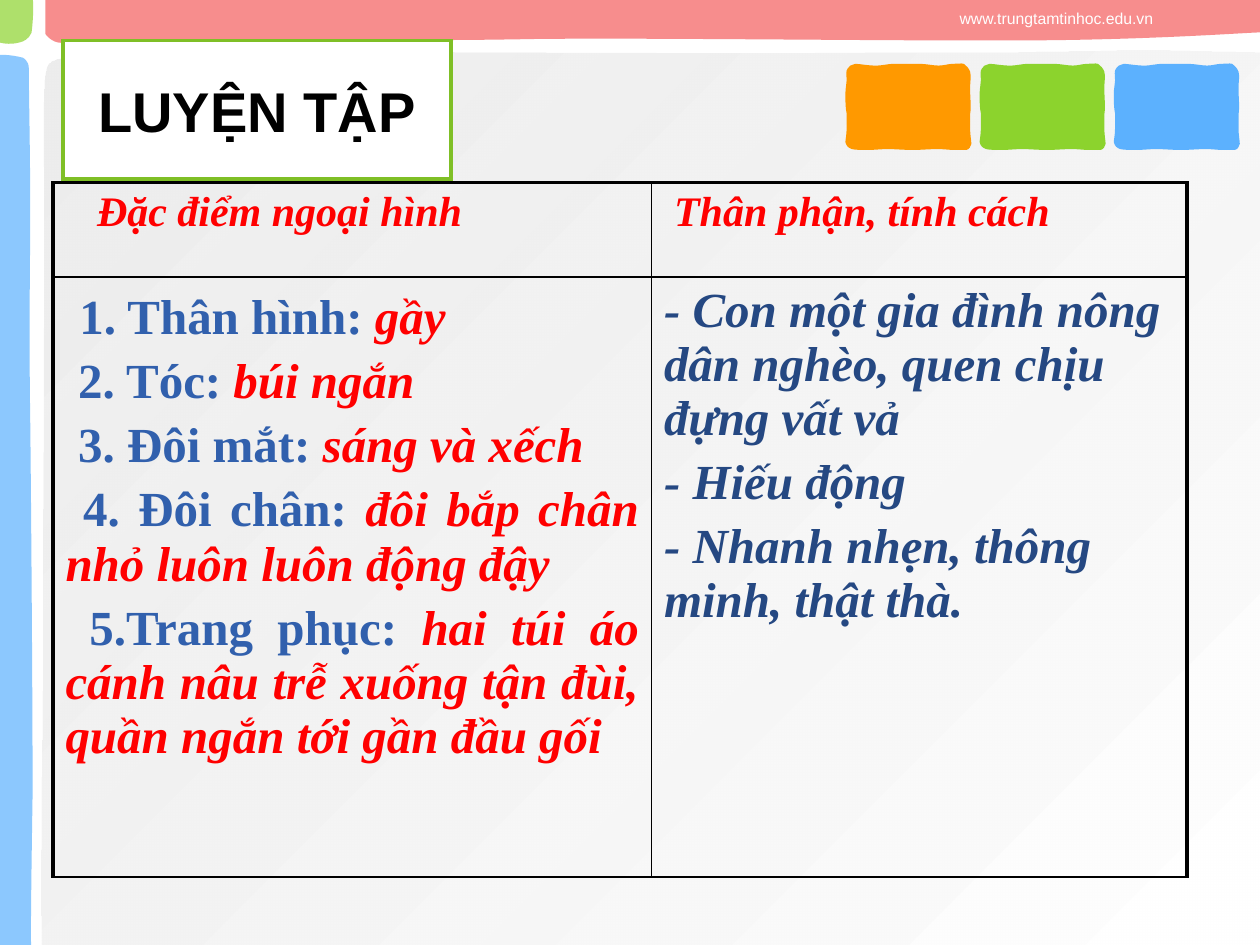
from lxml import etree
from pptx import Presentation
from pptx import util as u
from pptx.dml import color
from pptx.enum import shapes, text
from pptx.oxml import ns

COLS, ROWS = 10, 7.5
RED, NAVY, BLUE, LIME = "FF0000", "254882", "3160AD", "8CD32D"
SKY = "5CB1FE"
SERIF = dict(name="Times New Roman", bold=True, italic=True)

PANEL = [(100, 100), (100, .56), (88.2, 0, 85, .56, 75.2, .56),
         (65.5, .56, 53.5, .7, 41.4, .56), (29.3, .4, 9.4, .4, 2.6, 1),
         (.4, 1.4, .4, 1.5, .3, 4.9), (.2, 8.1, .3, 10, .3, 20),
         (.3, 30.6, .2, 52.5, .2, 65.7), (.2, 79, 0, 87.6, .1, 100)]
BAND = [(0, 0), (100, 0), (100, 76), (100, 74, 92.5, 91, 82.6, 94),
        (72.6, 97, 51.3, 88, 40.5, 91), (29.6, 97, 23.8, 91, 17.3, 91),
        (10.8, 94, 4.3, 100, 1.3, 100), (.5, 100, 0, 79, 0, 79)]
SIDE = [(0, 100), (92, 100), (90, 100, 92, 93, 96, 83),
        (96, 73, 92, 51, 89, 41), (85, 30, 89, 24, 89, 17.5),
        (89, 11, 85, 4.5, 85, 1.6), (85, .7, 67, .4, 67, .4),
        (26, 0, 0, .1, 0, .1)]
CORNER = [(0, 0), (97, 0), (100, 33, 93, 72, 93, 72),
          (85, 86, 70, 92, 56, 94), (26, 100, 0, 94, 0, 94)]
TILE = [(2, 6), (3, 3, 4, 3, 8, 1), (11, 1, 18, 3, 24, 3),
        (30, 3, 33, 1, 39, 1), (46, 1, 54, 1, 59, 1), (64, 1, 70, 3, 74, 3),
        (78, 3, 82, 1, 85, 1), (88, 1, 92, 0, 94, 1), (96, 3, 98, 6, 99, 10),
        (100, 16, 99, 20, 99, 30), (99, 39, 100, 51, 99, 59),
        (99, 67, 99, 70, 99, 75), (99, 83, 100, 90, 100, 93),
        (99, 96, 99, 99, 96, 100), (94, 100, 89, 100, 86, 100),
        (83, 100, 78, 99, 73, 99), (67, 99, 60, 100, 53, 100),
        (47, 100, 39, 99, 34, 99), (28, 99, 23, 100, 18, 100),
        (13, 100, 8, 100, 5, 99), (2, 97, 1, 96, 0, 91),
        (0, 88, 1, 83, 1, 75), (1, 68, 1, 65, 1, 58),
        (0, 52, 0, 43, 0, 36), (0, 28, 1, 25, 1, 20), (1, 14, 0, 9, 2, 6)]

HEADS = [("Đặc điểm ngoại hình", .25), ("Thân phận, tính cách", .08)]
LOOKS = [("1. Thân hình: ", "gầy", .11), ("2. Tóc: ", "búi ngắn", .1),
         ("3. Đôi mắt: ", "sáng và xếch", .1),
         ("4. Đôi chân: ", "đôi bắp chân nhỏ luôn luôn động đậy", .14),
         ("5.Trang phục: ", "hai túi áo cánh nâu trễ xuống tận đùi, "
          "quần ngắn tới gần đầu gối", .19)]
TRAITS = ["- Con một gia đình nông dân nghèo, quen chịu đựng vất vả",
          "- Hiếu động", "- Nhanh nhẹn, thông minh, thật thà."]


def rgb(code):
    return color.RGBColor.from_string(code)


def put(item, look):
    for key, val in look.items():
        setattr(item, key, val)


def place(box):
    return [u.Inches(n) for n in box]


def fade(fill, share):
    tone = next(fill._xPr.iter(ns.qn("a:srgbClr")))
    etree.SubElement(tone, ns.qn("a:alpha"), val=str(share * 1000))


def bend(form, path):
    lines = iter(list(form._element.iter(ns.qn("a:lnTo"))))
    for part in path[1:]:
        group = [next(lines) for n in range(len(part) // 2)]
        if len(group) == 3:
            curve = etree.Element(ns.qn("a:cubicBezTo"))
            group[0].addprevious(curve)
            for line in group:
                curve.append(line[0])
                line.getparent().remove(line)


def blob(slide, box, path, tone=None, share=None):
    x, y, w, h = place(box)
    dots = [(round(x + w * part[i] / 100), round(y + h * part[i + 1] / 100))
            for part in path for i in range(0, len(part), 2)]
    build = slide.shapes.build_freeform(*dots[0], scale=1.0)
    build.add_line_segments(dots[1:], close=True)
    form = build.convert_to_shape()
    bend(form, path)
    form.shadow.inherit = False
    form.line.fill.background()
    if tone:
        form.fill.solid()
        form.fill.fore_color.rgb = rgb(tone)
    else:
        form.fill.gradient()
        form.fill.gradient_angle = 315
        for stop, code in zip(form.fill.gradient_stops, ("E6E6E6", "FFFFFF")):
            stop.color.rgb = rgb(code)
    if share:
        fade(form.fill, share)


def write(para, words, tone, look):
    run = para.add_run()
    run.text = words
    put(run.font, look)
    run.font.color.rgb = rgb(tone)


def frame(slide, box):
    x, y, w, h = box
    blob(slide, (x + .32, y + .38, w - .32, h - .38), PANEL, share=70)
    blob(slide, (x + .36, y, w - .36, .34), BAND, "F45E5E", 70)
    blob(slide, (x, y + .43, .27, h - .43), SIDE, SKY, 70)
    blob(slide, (x, y, .27, .36), CORNER, LIME, 70)


def tiles(slide, box):
    x, y, w, h = box
    wide, gap = 1, (w - 3) / 2
    for i, tone in enumerate(("FF9900", LIME, SKY)):
        blob(slide, (x + i * (wide + gap), y, wide, h), TILE, tone)


def link(slide, box):
    area = slide.shapes.add_textbox(*place(box)).text_frame
    area.word_wrap = False
    para = area.paragraphs[0]
    para.alignment = text.PP_ALIGN.RIGHT
    write(para, "www.trungtamtinhoc.edu.vn", "FFFFFF",
          dict(name="Arial", size=u.Pt(9)))


def title(slide, box):
    card = slide.shapes.add_shape(shapes.MSO_SHAPE.ROUNDED_RECTANGLE,
                                  *place(box))
    card.adjustments[0] = 0
    card.shadow.inherit = False
    card.fill.solid()
    card.fill.fore_color.rgb = rgb("FFFFFF")
    card.line.color.rgb = rgb("7FBF26")
    card.line.width = u.Pt(2)
    etree.SubElement(card.line._ln, ns.qn("a:miter"), lim="800000")
    area = card.text_frame
    area.vertical_anchor = text.MSO_ANCHOR.MIDDLE
    para = area.paragraphs[0]
    para.alignment = text.PP_ALIGN.CENTER
    write(para, "LUYỆN TẬP", "000000",
          dict(name="Arial", size=u.Pt(32), bold=True))


def edge(cell, sides):
    props = cell._tc.get_or_add_tcPr()
    for i, (side, wide) in enumerate(sides.items()):
        line = etree.Element(ns.qn("a:ln" + side), w=str(u.Pt(wide)))
        fill = etree.SubElement(line, ns.qn("a:solidFill"))
        etree.SubElement(fill, ns.qn("a:srgbClr"), val="000000")
        props.insert(i, line)


def fill_cell(cell, paras, look, align=None):
    area = cell.text_frame
    for i, (runs, dent) in enumerate(paras):
        para = area.paragraphs[0] if i == 0 else area.add_paragraph()
        para._p.get_or_add_pPr().set("indent", str(u.Inches(dent)))
        para.alignment = align
        if i:
            para.space_before = u.Pt(5.6)
        for words, tone, slant in runs:
            write(para, words, tone, {**look, "italic": slant})


def grid(slide, box):
    table = slide.shapes.add_table(2, 2, *place(box)).table
    put(table, dict(first_row=False, horz_banding=False))
    x, y, w, h = box
    for col, wide in zip(table.columns, (4.75, w - 4.75)):
        col.width = u.Inches(wide)
    for row, high in zip(table.rows, (.75, h - .75)):
        row.height = u.Inches(high)
    for r in (0, 1):
        for c in (0, 1):
            cell = table.cell(r, c)
            cell.fill.background()
            edge(cell, dict(L=1 if c else 2.25, R=2.25 if c else 1,
                            T=1 if r else 2.25, B=1))
    head = {**SERIF, "size": u.Pt(24)}
    body = {**SERIF, "size": u.Pt(28)}
    for c, (words, dent) in enumerate(HEADS):
        fill_cell(table.cell(0, c), [([(words, RED, True)], dent)], head)
    left = table.cell(1, 0)
    left.margin_top = u.Inches(.11)
    fill_cell(left, [([(a, BLUE, False), (b, RED, True)], dent)
                     for a, b, dent in LOOKS], body, text.PP_ALIGN.JUSTIFY)
    fill_cell(table.cell(1, 1), [([(a, NAVY, True)], 0) for a in TRAITS], body)


def main():
    deck = Presentation()
    put(deck, dict(slide_width=u.Inches(COLS), slide_height=u.Inches(ROWS)))
    slide = deck.slides.add_slide(deck.slide_layouts[6])
    frame(slide, (0, 0, COLS, ROWS))
    tiles(slide, (6.71, .5, 3.13, .69))
    link(slide, (7.48, .02, 1.77, .25))
    grid(slide, (.42, 1.45, 9, 5.51))
    title(slide, (.5, .32, 3.08, 1.1))
    deck.save("out.pptx")


if __name__ == "__main__":
    main()
